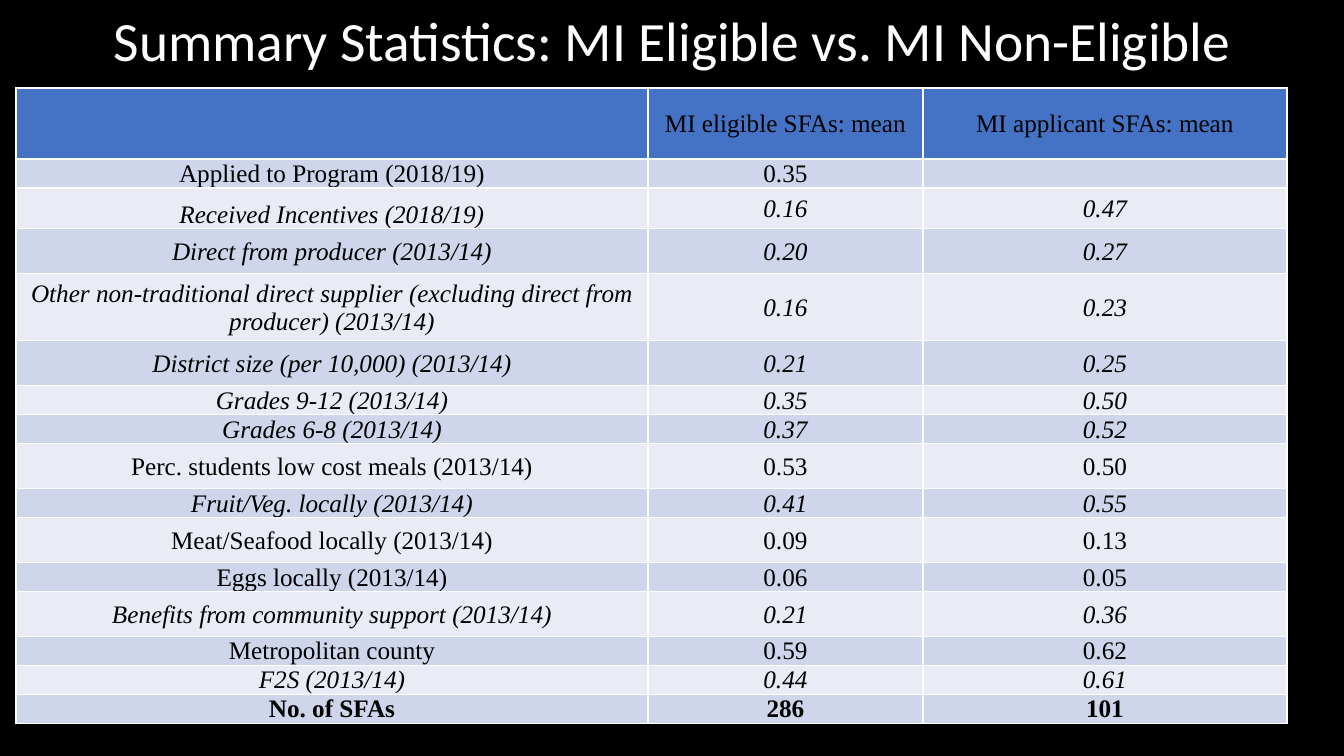
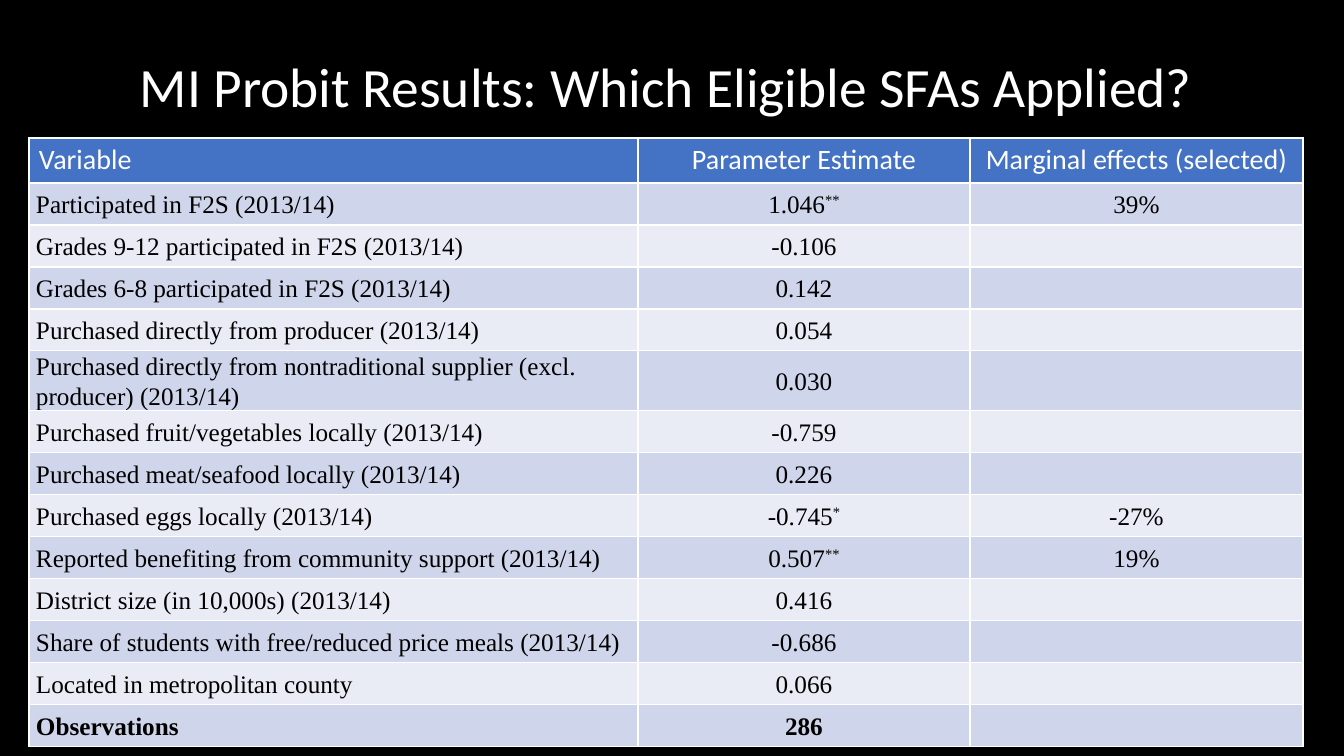
from dataclasses import dataclass

from pptx import Presentation
from pptx.dml.color import RGBColor
from pptx.enum.text import MSO_ANCHOR, MSO_AUTO_SIZE, PP_ALIGN
from pptx.util import Pt

EMU_PER_PX = 914400 / 100.8


@dataclass(frozen=True)
class Theme:
    background: str = "000000"
    light_text: str = "FFFFFF"
    dark_text: str = "000000"
    header_fill: str = "4472C4"
    odd_fill: str = "CFD5EA"
    even_fill: str = "E9EBF5"
    title_font: str = "Calibri"
    body_font: str = "Times New Roman"
    title_size: float = 39.6
    header_size: float = 20
    body_size: float = 18
    empty_size: float = 12


theme = Theme()


def px(length):
    return round(length * EMU_PER_PX)


def write(para, text, name, size, color, bold=False, italic=False):
    """Add the text as runs, raising any trailing stars."""
    number = text.rstrip("*")
    for part, raised in ((number, False), (text[len(number):], True)):
        if not part:
            continue
        span = para.add_run()
        span.text = part
        values = {"name": name, "size": Pt(size), "bold": bold, "italic": italic}
        for key, value in values.items():
            setattr(span.font, key, value)
        span.font.color.rgb = RGBColor.from_string(color)
        if raised:
            span._r.get_or_add_rPr().set("baseline", "30000")


# Header and body formats; margins run left, top, right, bottom
DARK_BODY = dict(name=theme.body_font, size=theme.body_size, color=theme.dark_text)
LIGHT_HEADER = dict(name=theme.title_font, size=theme.header_size, color=theme.light_text)

# Each row: height, style, label, values
summary_rows = [
    (71, "", "", "MI eligible SFAs: mean", "MI applicant SFAs: mean"),
    (28, "", "Applied to Program (2018/19)", "0.35", ""),
    (41, "italic", "Received Incentives (2018/19)", "0.16", "0.47"),
    (45, "italic", "Direct from producer (2013/14)", "0.20", "0.27"),
    (67, "italic", "Other non-traditional direct supplier (excluding direct from "
     "producer) (2013/14)", "0.16", "0.23"),
    (45, "italic", "District size (per 10,000) (2013/14)", "0.21", "0.25"),
    (28, "italic", "Grades 9-12 (2013/14)", "0.35", "0.50"),
    (28, "italic", "Grades 6-8 (2013/14)", "0.37", "0.52"),
    (45, "", "Perc. students low cost meals (2013/14)", "0.53", "0.50"),
    (28, "italic", "Fruit/Veg. locally (2013/14)", "0.41", "0.55"),
    (45, "", "Meat/Seafood locally (2013/14)", "0.09", "0.13"),
    (28, "", "Eggs locally (2013/14)", "0.06", "0.05"),
    (45, "italic", "Benefits from community support (2013/14)", "0.21", "0.36"),
    (28, "", "Metropolitan county", "0.59", "0.62"),
    (28, "italic", "F2S (2013/14)", "0.44", "0.61"),
    (28, "bold", "No. of SFAs", "286", "101"),
]
probit_rows = [
    (45, "", "Variable", "Parameter Estimate", "Marginal effects (selected)"),
    (42, "", "Participated in F2S (2013/14)", "1.046**", "39%"),
    (42, "", "Grades 9-12 participated in F2S (2013/14)", "-0.106", ""),
    (42, "", "Grades 6-8 participated in F2S (2013/14)", "0.142", ""),
    (42, "", "Purchased directly from producer (2013/14)", "0.054", ""),
    (42, "", "Purchased directly from nontraditional supplier (excl. producer) "
     "(2013/14)", "0.030", ""),
    (42, "", "Purchased fruit/vegetables locally (2013/14)", "-0.759", ""),
    (42, "", "Purchased meat/seafood locally (2013/14)", "0.226", ""),
    (42, "", "Purchased eggs locally (2013/14)", "-0.745*", "-27%"),
    (42, "", "Reported benefiting from community support (2013/14)", "0.507**", "19%"),
    (42, "", "District size (in 10,000s) (2013/14)", "0.416", ""),
    (42, "", "Share of students with free/reduced price meals (2013/14)", "-0.686", ""),
    (42, "", "Located in metropolitan county", "0.066", ""),
    (42, "bold", "Observations", "286", ""),
]

pages = [
    dict(
        title="Summary Statistics: MI Eligible vs. MI Non-Eligible",
        title_box=(93, 13, 1159, 62), corner=(16, 88), columns=(632, 275, 364),
        rows=summary_rows, header=DARK_BODY, header_anchor=MSO_ANCHOR.MIDDLE,
        header_margins=(1, 1, 1, 0), margins=(1, 1, 1, 0),
        label_align=PP_ALIGN.CENTER, spacing=1.0, bottom_cells={(2, 0)},
    ),
    dict(
        title="MI Probit Results: Which Eligible SFAs Applied? ",
        title_box=(93, 27, 1159, 125), corner=(29, 138), columns=(609, 332, 333),
        rows=probit_rows, header=LIGHT_HEADER, header_anchor=MSO_ANCHOR.TOP,
        header_margins=(10, 5, 10, 5), margins=(7, 0, 7, 0),
        label_align=PP_ALIGN.LEFT, spacing=1.07, bottom_cells=set(),
    ),
]

deck = Presentation()
deck.slide_width, deck.slide_height = px(1344), px(756)
title_only = deck.slide_layouts[5]

for page in pages:
    # Background and title
    slide = deck.slides.add_slide(title_only)
    slide.background.fill.solid()
    slide.background.fill.fore_color.rgb = RGBColor.from_string(theme.background)
    title = slide.shapes.title
    for side, length in zip(("left", "top", "width", "height"), page["title_box"]):
        setattr(title, side, px(length))
    frame = title.text_frame
    frame.auto_size = MSO_AUTO_SIZE.NONE
    frame.word_wrap = True
    frame.vertical_anchor = MSO_ANCHOR.MIDDLE
    para = frame.paragraphs[0]
    para.alignment = PP_ALIGN.CENTER
    para.line_spacing = 0.9
    write(para, page["title"], theme.title_font, theme.title_size, theme.light_text)

    # Table grid
    rows, columns = page["rows"], page["columns"]
    left, top = page["corner"]
    height = sum(row[0] for row in rows)
    table = slide.shapes.add_table(
        len(rows), len(columns), px(left), px(top), px(sum(columns)), px(height)
    ).table
    for column, width in zip(table.columns, columns):
        column.width = px(width)

    # Table cells
    for row_index, (row_height, style, *texts) in enumerate(rows):
        table.rows[row_index].height = px(row_height)
        is_header = row_index == 0
        body_fill = theme.odd_fill if row_index % 2 else theme.even_fill
        fill = theme.header_fill if is_header else body_fill
        text_format = page["header"] if is_header else DARK_BODY
        margins = page["header_margins"] if is_header else page["margins"]
        anchor = page["header_anchor"] if is_header else MSO_ANCHOR.MIDDLE
        for column_index, text in enumerate(texts):
            cell = table.cell(row_index, column_index)
            cell.fill.solid()
            cell.fill.fore_color.rgb = RGBColor.from_string(fill)
            for side, margin in zip(("left", "top", "right", "bottom"), margins):
                setattr(cell, f"margin_{side}", px(margin))
            at_bottom = (row_index, column_index) in page["bottom_cells"]
            cell.vertical_anchor = MSO_ANCHOR.BOTTOM if at_bottom else anchor
            para = cell.text_frame.paragraphs[0]
            if not text:
                # A small end mark keeps an empty cell from stretching its row
                end_mark = para._p.get_or_add_endParaRPr()
                end_mark.set("sz", str(theme.empty_size * 100))
                continue
            para.alignment = PP_ALIGN.CENTER if column_index else page["label_align"]
            if not is_header:
                para.line_spacing = page["spacing"]
            write(para, text, **text_format, bold=style == "bold", italic=style == "italic")

deck.save("out.pptx")
